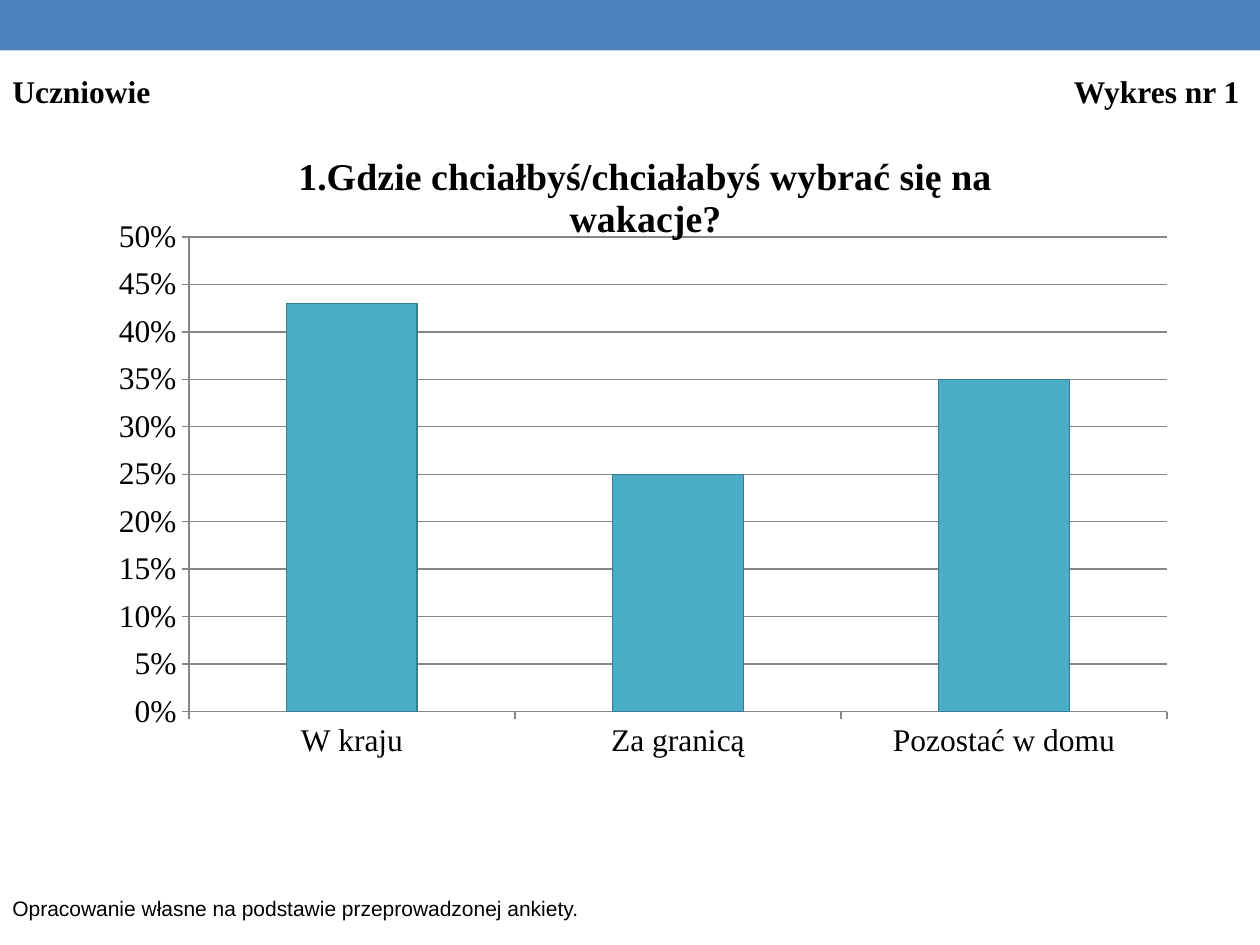
from lxml import etree
from pptx import Presentation
from pptx.chart.data import CategoryChartData
from pptx.dml.color import RGBColor
from pptx.enum.chart import XL_CHART_TYPE, XL_TICK_MARK
from pptx.enum.shapes import MSO_SHAPE
from pptx.oxml import parse_xml
from pptx.oxml.ns import nsdecls, qn
from pptx.util import Cm, Pt

COLUMN_CLUSTERED = XL_CHART_TYPE.COLUMN_CLUSTERED
TICK_OUTSIDE = XL_TICK_MARK.OUTSIDE
RECTANGLE = MSO_SHAPE.RECTANGLE

BLUE = RGBColor(0x4F, 0x81, 0xBD)
TEAL = RGBColor(0x4B, 0xAC, 0xC6)
DARK_TEAL = RGBColor(0x35, 0x7D, 0x91)
GRAY = RGBColor(0x86, 0x86, 0x86)
BLACK = RGBColor(0, 0, 0)
WHITE = RGBColor(0xFF, 0xFF, 0xFF)

SERIF = "Times New Roman"
SANS = "Arial"
SLIDE_WIDTH = Cm(25.4)
SLIDE_HEIGHT = Cm(19.05)


def set_font(font, name, size, bold=False):
    font.name = name
    font.size = Pt(size)
    font.bold = bold
    font.color.rgb = BLACK


def add_band(slide, left, top, width, height):
    band = slide.shapes.add_shape(RECTANGLE, left, top, width, height)
    band.shadow.inherit = False
    band.fill.solid()
    band.fill.fore_color.rgb = BLUE
    band.line.fill.background()


def add_text(slide, left, top, width, height, text, font_name, size, bold=False):
    box = slide.shapes.add_textbox(left, top, width, height)
    box.text_frame.word_wrap = True
    paragraph = box.text_frame.paragraphs[0]
    paragraph.text = text
    for run in paragraph.runs:
        set_font(run.font, font_name, size, bold)
    return paragraph


def add_header(slide, left, top, width, height):
    paragraph = add_text(slide, left, top, width, height,
                         "Uczniowie\tWykres nr 1", SERIF, 18, True)
    tabs = etree.SubElement(paragraph._p.get_or_add_pPr(), qn("a:tabLst"))
    tab = etree.SubElement(tabs, qn("a:tab"))
    tab.set("pos", str(width - Cm(0.66)))
    tab.set("algn", "r")


def set_plot_layout(chart, x, y, width, height):
    plot_area = chart._chartSpace.chart.plotArea
    for old_layout in plot_area.findall(qn("c:layout")):
        plot_area.remove(old_layout)
    plot_area.insert(0, parse_xml(
        f'<c:layout {nsdecls("c")}><c:manualLayout>'
        '<c:layoutTarget val="inner"/><c:xMode val="edge"/><c:yMode val="edge"/>'
        f'<c:x val="{x}"/><c:y val="{y}"/><c:w val="{width}"/><c:h val="{height}"/>'
        '</c:manualLayout></c:layout>'))


def format_axis(axis):
    set_font(axis.tick_labels.font, SERIF, 18)
    axis.major_tick_mark = TICK_OUTSIDE
    axis.format.line.color.rgb = GRAY


def add_survey_chart(slide, left, top, width, height):
    data = CategoryChartData(number_format="0%")
    data.categories = ["W kraju", "Za granicą", "Pozostać w domu"]
    data.add_series("Series 1", [0.43, 0.25, 0.35])
    chart = slide.shapes.add_chart(COLUMN_CLUSTERED, left, top, width, height, data).chart
    set_font(chart.font, SANS, 18)
    chart.has_legend = False

    chart.has_title = True
    title = chart.chart_title
    title.include_in_layout = False
    title.text_frame.text = "1.Gdzie chciałbyś/chciałabyś wybrać się na wakacje?"
    set_font(title.text_frame.paragraphs[0].runs[0].font, SERIF, 21.6, True)

    format_axis(chart.category_axis)
    value_axis = chart.value_axis
    format_axis(value_axis)
    value_axis.minimum_scale = 0
    value_axis.maximum_scale = 0.5
    value_axis.major_unit = 0.05
    value_axis.tick_labels.number_format = "0%"
    value_axis.tick_labels.number_format_is_linked = False
    value_axis.major_gridlines.format.line.color.rgb = GRAY

    plot = chart.plots[0]
    plot.gap_width = 150
    plot.vary_by_categories = False
    columns = plot.series[0].format
    columns.fill.solid()
    columns.fill.fore_color.rgb = TEAL
    columns.line.color.rgb = DARK_TEAL
    columns.line.width = Pt(0.75)
    set_plot_layout(chart, 0.07, 0.167, 0.921, 0.704)


def main():
    presentation = Presentation()
    presentation.slide_width = SLIDE_WIDTH
    presentation.slide_height = SLIDE_HEIGHT
    slide = presentation.slides.add_slide(presentation.slide_layouts[6])
    add_band(slide, 0, 0, SLIDE_WIDTH, Cm(1.02))
    add_survey_chart(slide, Cm(2.31), Cm(2.51), Cm(21.41), Cm(13.59))
    add_text(slide, 0, Cm(17.93), Cm(15.19), Cm(0.76),
             "Opracowanie własne na podstawie przeprowadzonej ankiety.", SANS, 12)
    add_header(slide, 0, Cm(1.32), SLIDE_WIDTH, Cm(1.02))
    presentation.save("out.pptx")


if __name__ == "__main__":
    main()
